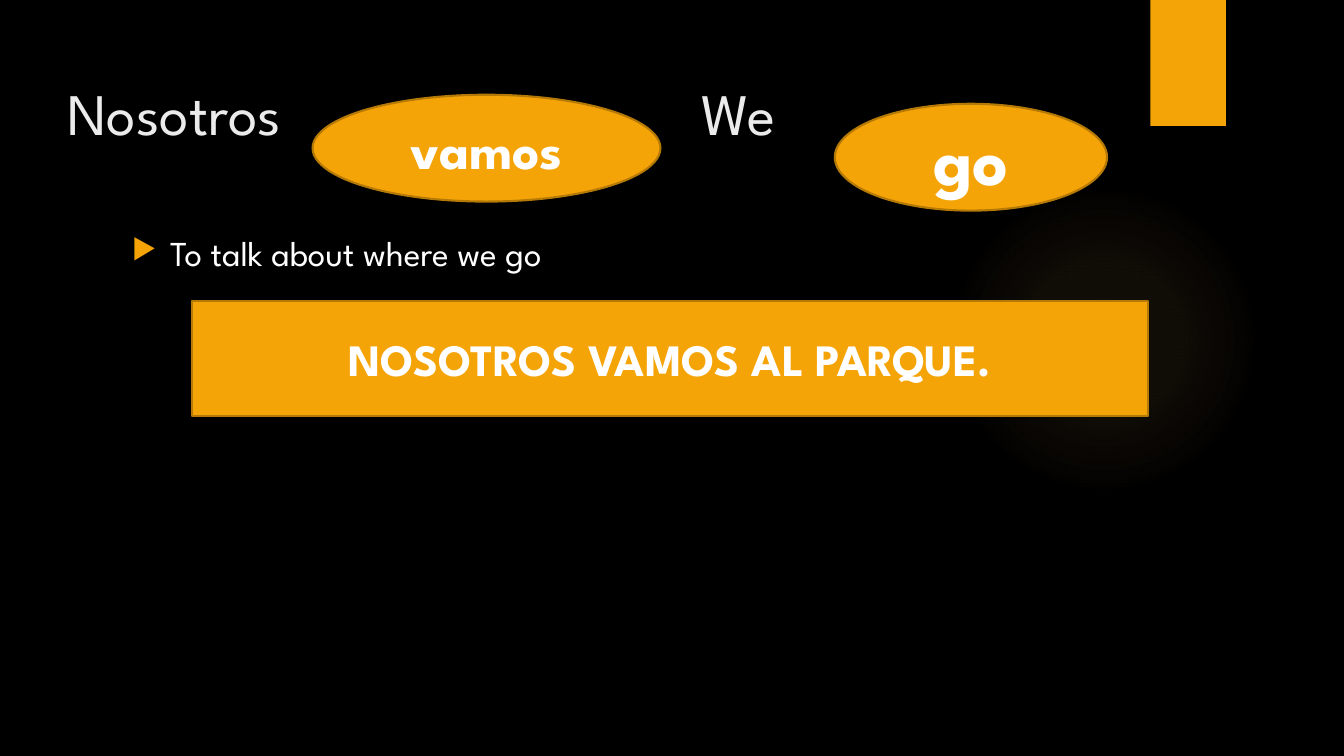
"""Build a Spanish grammar slide about saying where we go."""
from pptx import Presentation
from pptx.dml.color import RGBColor
from pptx.enum.shapes import MSO_SHAPE
from pptx.enum.text import MSO_ANCHOR, PP_ALIGN
from pptx.oxml import parse_xml
from pptx.oxml.ns import nsdecls, qn
from pptx.util import Inches, Pt

OVAL, RECT = MSO_SHAPE.OVAL, MSO_SHAPE.RECTANGLE
LEFT, CENTER = PP_ALIGN.LEFT, PP_ALIGN.CENTER
TOP, MIDDLE = MSO_ANCHOR.TOP, MSO_ANCHOR.MIDDLE
BLACK = RGBColor(0x00, 0x00, 0x00)
WHITE = RGBColor(0xFF, 0xFF, 0xFF)
PALE = RGBColor(0xEB, 0xEB, 0xEB)
ORANGE = RGBColor(0xF5, 0xA4, 0x08)
BROWN = RGBColor(0xB5, 0x79, 0x06)
GLOW = RGBColor(0xFA, 0xC9, 0x6A)
FONT = "League Spartan"


def write(tf, text, size, color=WHITE, bold=False, align=LEFT, anchor=TOP,
          tab=None, bullet=None):
    tf.word_wrap = True
    tf.vertical_anchor = anchor
    p = tf.paragraphs[0]
    p.alignment = align
    pPr = p._p.get_or_add_pPr()
    if bullet:
        indent = Inches(0.38)
        pPr.set("marL", str(indent))
        pPr.set("indent", str(-indent))
        for xml in (f'<a:buClr {nsdecls("a")}><a:srgbClr val="{ORANGE}"/></a:buClr>',
                    f'<a:buSzPct {nsdecls("a")} val="80000"/>',
                    f'<a:buChar {nsdecls("a")} char="{bullet}"/>'):
            pPr.append(parse_xml(xml))
    if tab:
        pPr.append(parse_xml(f'<a:tabLst {nsdecls("a")}>'
                             f'<a:tab pos="{Inches(tab)}" algn="l"/></a:tabLst>'))
    r = p.add_run()
    r.text = text
    r.font.name = FONT
    r.font.size = Pt(size)
    r.font.bold = bold
    r.font.color.rgb = color


class Deck:
    """Hold the presentation, its style and the current slide."""

    def __init__(self):
        self.prs = Presentation()
        self.prs.slide_width = Inches(13.33)
        self.prs.slide_height = Inches(7.5)
        self.s = self.prs.slides.add_slide(self.prs.slide_layouts[6])
        fill = self.s.background.fill
        fill.solid()
        fill.fore_color.rgb = BLACK

    def shape(self, kind, box, line=None):
        sp = self.s.shapes.add_shape(kind, *map(Inches, box))
        sp.shadow.inherit = False
        sp.fill.solid()
        sp.fill.fore_color.rgb = ORANGE
        if line:
            sp.line.color.rgb = line
            sp.line.width = Pt(1.5)
        else:
            sp.line.fill.background()
        return sp

    def glow(self, box, stops):
        sp = self.shape(OVAL, box)
        sp.fill.background()
        spPr = sp._element.spPr
        marks = "".join(
            f'<a:gs pos="{pos * 1000}"><a:srgbClr val="{GLOW}">'
            f'<a:alpha val="{alpha * 1000}"/></a:srgbClr></a:gs>'
            for pos, alpha in stops)
        grad = parse_xml(
            f'<a:gradFill {nsdecls("a")}><a:gsLst>{marks}</a:gsLst><a:path path="circle">'
            '<a:fillToRect l="50000" t="50000" r="50000" b="50000"/></a:path></a:gradFill>')
        spPr.replace(spPr.find(qn("a:noFill")), grad)

    def label(self, kind, box, text, size):
        sp = self.shape(kind, box, BROWN)
        write(sp.text_frame, text, size, bold=True, align=CENTER, anchor=MIDDLE)

    def text(self, box, text, size, **style):
        sp = self.s.shapes.add_textbox(*map(Inches, box))
        write(sp.text_frame, text, size, **style)


def main():
    deck = Deck()
    deck.glow((9.41, 1.83, 3.08, 3.08), [(0, 7), (36, 6), (69, 0), (100, 0)])
    deck.shape(RECT, (11.41, 0, 0.75, 1.25))
    deck.text((0.57, 0.71, 11.06, 0.77), "Nosotros\tWe", 42, color=PALE, tab=6.29)
    deck.text((1.21, 2.25, 9.78, 4.59), "To talk about where we go", 25, bullet="▶")
    deck.label(OVAL, (3.1, 0.94, 3.45, 1.06), "vamos", 38)
    deck.label(RECT, (1.9, 2.99, 9.49, 1.14), "NOSOTROS VAMOS AL PARQUE.", 32)
    deck.label(OVAL, (8.28, 1.03, 2.7, 1.06), "go", 50)
    deck.prs.save("out.pptx")


if __name__ == "__main__":
    main()
